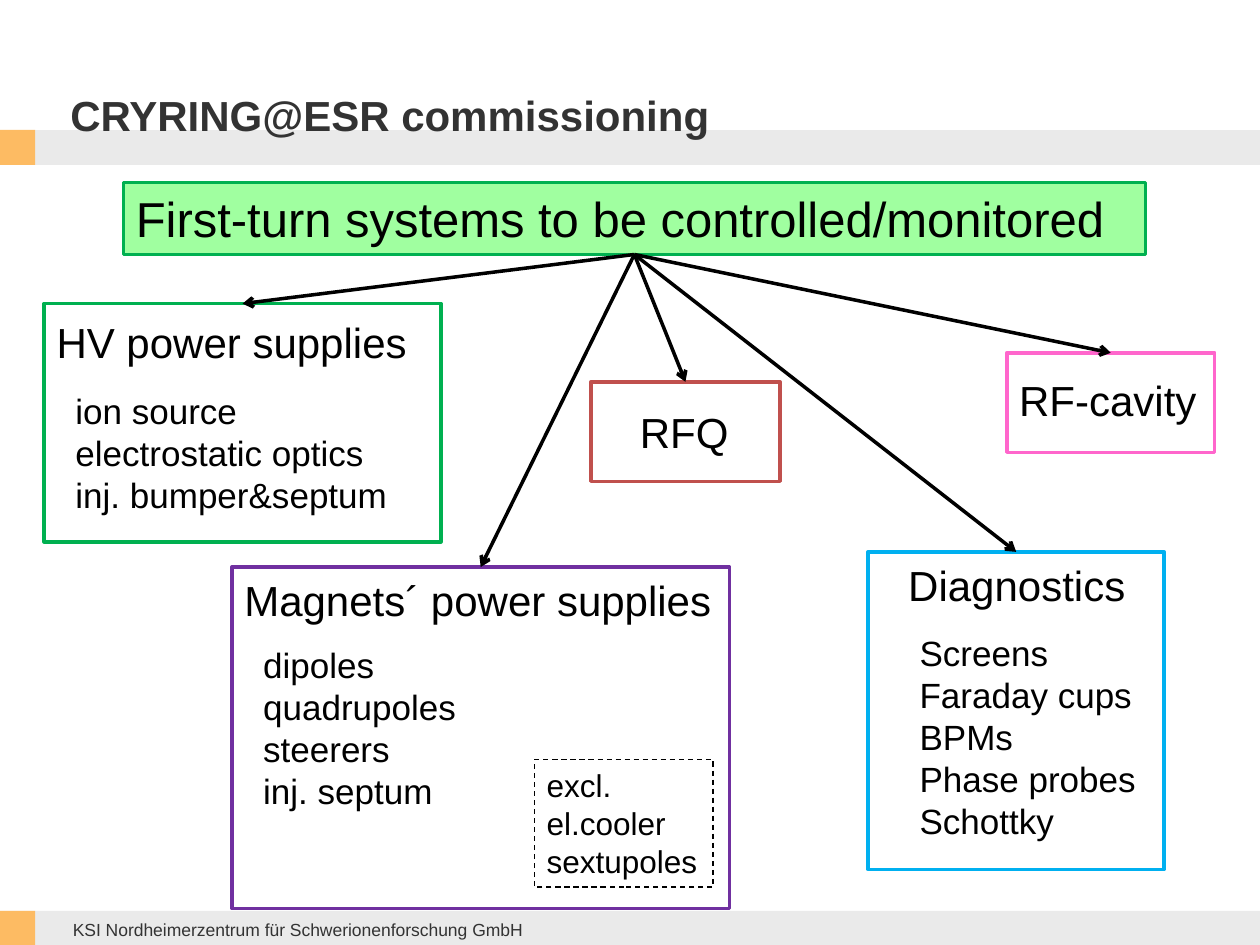
import pptx
import pptx.util
import pptx.dml.color
import pptx.enum.dml
import pptx.enum.shapes
import pptx.enum.text
import pptx.oxml.ns
from dataclasses import dataclass
from lxml import etree

Inches = pptx.util.Inches
Pt = pptx.util.Pt
Anchor = pptx.enum.text.MSO_ANCHOR
AutoSize = pptx.enum.text.MSO_AUTO_SIZE


@dataclass(frozen=True)
class Theme:
    font: str = "Arial"
    black: str = "000000"
    dark: str = "333333"
    band: str = "EAEAEA"
    accent: str = "FDBB63"
    light_green: str = "66FF66"
    green: str = "00B050"
    purple: str = "7030A0"
    red: str = "C0504D"
    pink: str = "FF66CC"
    blue: str = "00B0F0"
    banner_size: int = 28
    heading_size: int = 24
    item_size: int = 20
    note_size: int = 18
    footer_size: int = 10
    line_width: float = 2
    band_width: float = 20


def rgb(code):
    return pptx.dml.color.RGBColor.from_string(code)


class SlideBuilder:
    def __init__(self, theme, page):
        self.theme = theme
        self.page = page

    def set_text(self, shape, lines, size, color=None, bold=False, wrap=True,
                 anchor=Anchor.TOP, autosize=AutoSize.SHAPE_TO_FIT_TEXT):
        frame = shape.text_frame
        frame.text = "\n".join(lines)
        frame.word_wrap = wrap
        frame.auto_size = autosize
        frame.vertical_anchor = anchor
        for para in frame.paragraphs:
            para.alignment = pptx.enum.text.PP_ALIGN.LEFT
            for span in para.runs:
                span.font.name = self.theme.font
                span.font.size = Pt(size)
                span.font.bold = bold
                span.font.color.rgb = rgb(color or self.theme.black)

    def text(self, place, lines, size, **style):
        box = self.page.shapes.add_textbox(*map(Inches, place))
        self.set_text(box, lines, size, **style)

    def box(self, place, fill=None, line=None, width=None, dash=None, opacity=None):
        box = self.page.shapes.add_shape(
            pptx.enum.shapes.MSO_SHAPE.RECTANGLE, *map(Inches, place))
        box.shadow.inherit = False
        if fill:
            box.fill.solid()
            box.fill.fore_color.rgb = rgb(fill)
        else:
            box.fill.background()
        if opacity:
            color = box._element.spPr.find(".//" + pptx.oxml.ns.qn("a:srgbClr"))
            etree.SubElement(color, pptx.oxml.ns.qn("a:alpha"), val=str(opacity * 1000))
        if line:
            box.line.color.rgb = rgb(line)
            box.line.width = Pt(width or self.theme.line_width)
            if dash:
                box.line.dash_style = dash
        else:
            box.line.fill.background()
        return box

    def line(self, start, end, color, width):
        line = self.page.shapes.add_connector(
            pptx.enum.shapes.MSO_CONNECTOR.STRAIGHT, *map(Inches, start + end))
        line.line.color.rgb = rgb(color)
        line.line.width = Pt(width)
        etree.SubElement(line._element.spPr, pptx.oxml.ns.qn("a:effectLst"))
        return line

    def arrow(self, source, target):
        arrow = self.line((0, 0), (1, 1), self.theme.black, self.theme.line_width)
        arrow.begin_connect(source, 2)
        arrow.end_connect(target, 0)
        outline = arrow._element.spPr.find(pptx.oxml.ns.qn("a:ln"))
        etree.SubElement(outline, pptx.oxml.ns.qn("a:tailEnd"), type="arrow")


def main():
    theme = Theme()
    deck = pptx.Presentation()
    deck.slide_width, deck.slide_height = Inches(10), Inches(7.5)
    builder = SlideBuilder(theme, deck.slides.add_slide(deck.slide_layouts[6]))

    builder.box((0, 7.23, 10, 0.28), fill=theme.band)
    builder.line((0, 1.17), (10, 1.17), theme.band, theme.band_width)
    builder.text((0.48, 7.24, 4.13, 0.27),
                 ["KSI Nordheimerzentrum für Schwerionenforschung GmbH"],
                 theme.footer_size, color=theme.dark, anchor=Anchor.MIDDLE)
    for top in (1.03, 7.23):
        builder.box((0, top, 0.28, 0.28), fill=theme.accent)
    builder.text((0.46, 0.3, 6.83, 0.86), ["CRYRING@ESR commissioning"],
                 theme.heading_size, color=theme.dark, bold=True,
                 anchor=Anchor.BOTTOM, autosize=AutoSize.NONE)

    banner = builder.box((0.98, 1.45, 8.11, 0.57), fill=theme.light_green,
                         line=theme.green, opacity=62)
    builder.set_text(banner, ["First-turn systems to be controlled/monitored"],
                     theme.banner_size)

    systems = [
        ((0.35, 2.41, 3.15, 1.89), theme.green,
         "HV power supplies", (0.35, 2.46, 3.01, 0.5),
         ["ion source", "electrostatic optics", "inj. bumper&septum"],
         (0.5, 3.04, 2.69, 1.11)),
        ((1.84, 4.5, 3.95, 2.71), theme.purple,
         "Magnets´ power supplies", (1.84, 4.51, 3.95, 0.5),
         ["dipoles", "quadrupoles", "steerers", "inj. septum"],
         (1.99, 5.06, 1.75, 1.45)),
        ((4.69, 3.03, 1.5, 0.79), theme.red,
         "RFQ", (4.98, 3.18, 0.91, 0.5), [], None),
        ((6.89, 4.38, 2.35, 2.52), theme.blue,
         "Diagnostics", (7.11, 4.39, 1.94, 0.5),
         ["Screens", "Faraday cups", "BPMs", "Phase probes", "Schottky"],
         (7.2, 4.96, 1.93, 1.78)),
        ((7.99, 2.8, 1.65, 0.79), theme.pink,
         "RF-cavity", (7.99, 2.92, 1.62, 0.5), [], None),
    ]
    for place, color, heading, heading_place, items, items_place in systems:
        system = builder.box(place, line=color)
        builder.text(heading_place, [heading], theme.heading_size, wrap=False)
        if items:
            builder.text(items_place, items, theme.item_size, wrap=False)
        builder.arrow(banner, system)

    excluded = builder.box((4.24, 6.03, 1.42, 1.01), line=theme.black, width=0.75,
                           dash=pptx.enum.dml.MSO_LINE.DASH)
    builder.set_text(excluded, ["excl. el.cooler", "sextupoles"], theme.note_size)

    deck.save("out.pptx")


if __name__ == "__main__":
    main()
